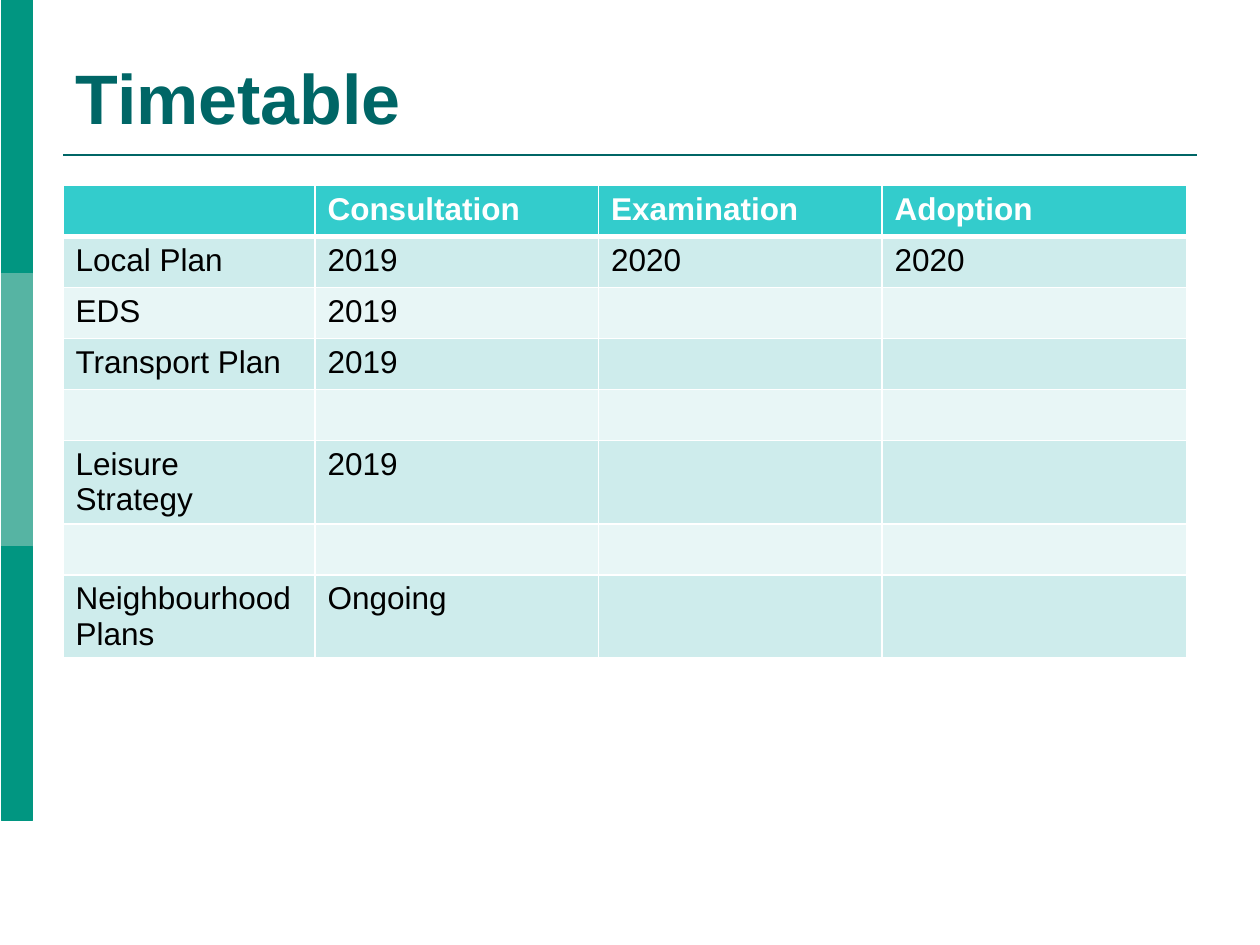
from lxml import etree
from pptx import Presentation
from pptx import util as u
from pptx.dml.color import RGBColor
from pptx.enum import shapes, text
from pptx.oxml.ns import qn

WIDE, HIGH = 10, 7.5
LEFT = 0.5
BAND = 2.17  # height of one side band
COLS = [2, 2.25, 2.25, 2.42]
FONT = "Arial"
HUES = {
    "dark": "006666", "green": "019681", "pale": "56B4A3",
    "head": "33CCCC", "odd": "CEECEC", "even": "E8F6F6",
    "white": "FFFFFF", "black": "000000",
}
ROWS = [
    ["", "Consultation", "Examination", "Adoption"],
    ["Local Plan", "2019", "2020", "2020"],
    ["EDS", "2019", "", ""],
    ["Transport Plan", "2019", "", ""],
    ["", "", "", ""],
    ["Leisure Strategy", "2019", "", ""],
    ["", "", "", ""],
    ["Neighbourhood Plans", "Ongoing", "", ""],
]


def hue(name):
    return RGBColor.from_string(HUES[name])


def style(para, size, tint, bold):
    for run in para.runs:
        font = run.font
        font.name, font.size, font.bold = FONT, u.Pt(size), bold
        font.color.rgb = hue(tint)


def add_band(slide, row, tint):
    band = slide.shapes.add_shape(
        shapes.MSO_SHAPE.RECTANGLE, u.Inches(0.01), u.Inches(row * BAND),
        u.Inches(0.25), u.Inches(BAND))
    band.shadow.inherit = False
    band.fill.solid()
    band.fill.fore_color.rgb = hue(tint)
    band.line.color.rgb = hue(tint)
    band.line.width = u.Pt(0.75)


def add_rule(slide, top):
    rule = slide.shapes.add_connector(
        shapes.MSO_CONNECTOR.STRAIGHT, u.Inches(LEFT), u.Inches(top),
        u.Inches(WIDE - LEFT), u.Inches(top))
    rule.line.color.rgb = hue("dark")
    rule.line.width = u.Pt(1.5)
    etree.SubElement(rule._element.spPr, qn("a:effectLst"))


def set_title(slide, words):
    title = slide.shapes.title
    title.left, title.top = u.Inches(LEFT), u.Inches(0.3)
    title.width, title.height = u.Inches(WIDE - 2 * LEFT), u.Inches(0.85)
    frame = title.text_frame
    frame.text = words
    frame.vertical_anchor = text.MSO_ANCHOR.BOTTOM
    para = frame.paragraphs[0]
    para.alignment = text.PP_ALIGN.LEFT
    style(para, 40, "dark", True)


def set_edges(cell, base):
    """Draw white cell borders; the bottom one may be heavier."""
    props = cell._tc.get_or_add_tcPr()
    widths = {"lnL": 1, "lnR": 1, "lnT": 1, "lnB": base}
    for spot, (tag, width) in enumerate(widths.items()):
        edge = etree.Element(qn("a:" + tag), w=str(u.Pt(width)))
        fill = etree.SubElement(edge, qn("a:solidFill"))
        etree.SubElement(fill, qn("a:srgbClr"), val=HUES["white"])
        props.insert(spot, edge)


def add_grid(slide):
    grid = slide.shapes.add_table(
        len(ROWS), len(COLS), u.Inches(LEFT), u.Inches(1.47),
        u.Inches(sum(COLS)), u.Inches(3.24)).table
    for col, width in zip(grid.columns, COLS):
        col.width = u.Inches(width)
    for r, row in enumerate(ROWS):
        head = r == 0
        tint = "head" if head else "odd" if r % 2 else "even"
        for c, words in enumerate(row):
            cell = grid.cell(r, c)
            cell.text_frame.text = words
            style(cell.text_frame.paragraphs[0], 18,
                  "white" if head else "black", head)
            cell.fill.solid()
            cell.fill.fore_color.rgb = hue(tint)
            set_edges(cell, 3 if head else 1)


def main():
    deck = Presentation()
    deck.slide_width, deck.slide_height = u.Inches(WIDE), u.Inches(HIGH)
    slide = deck.slides.add_slide(deck.slide_layouts[5])

    # Side bands and the rule under the title
    for row, tint in enumerate(["green", "pale", "green"]):
        add_band(slide, row, tint)
    add_rule(slide, 1.23)

    # Title and timetable
    set_title(slide, "Timetable")
    add_grid(slide)
    deck.save("out.pptx")


if __name__ == "__main__":
    main()
